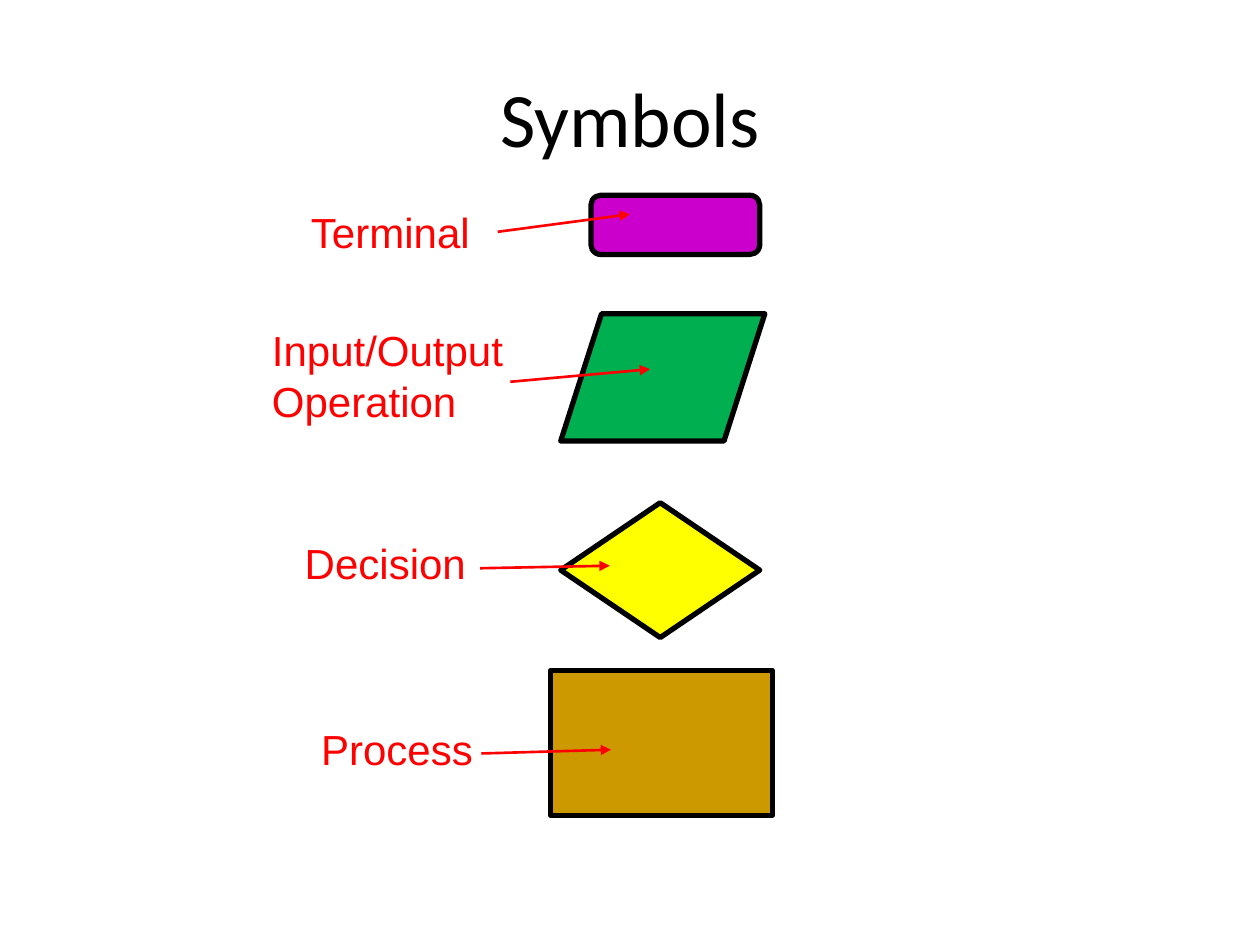
"""Build a slide that names the four basic flowchart symbols."""
from lxml import etree
from pptx import Presentation
from pptx import util as u
from pptx.dml.color import RGBColor
from pptx.enum import shapes, text
from pptx.oxml import ns

BLACK = RGBColor(0x00, 0x00, 0x00)
RED = RGBColor(0xFF, 0x00, 0x00)
PURPLE = RGBColor(0xCC, 0x00, 0xCC)
GREEN = RGBColor(0x00, 0xB0, 0x50)
YELLOW = RGBColor(0xFF, 0xFF, 0x00)
OCHRE = RGBColor(0xCC, 0x99, 0x00)
KIND = shapes.MSO_SHAPE

SYMBOLS = [
    (KIND.ROUNDED_RECTANGLE, PURPLE, (4.69, 1.55, 1.34, 0.47), 0,
     "Terminal", (2.37, 1.59, 2.13, 0.5), (3.95, 1.84, 5, 1.7)),
    (KIND.FLOWCHART_DATA, GREEN, (4.45, 2.49, 1.62, 1.01), 180,
     "Input/Output Operation", (2.06, 2.53, 2.65, 0.91), (4.05, 3.03, 5.16, 2.93)),
    (KIND.FLOWCHART_DECISION, YELLOW, (4.45, 3.99, 1.58, 1.07), 0,
     "Decision", (2.32, 4.22, 1.79, 0.5), (3.81, 4.51, 4.84, 4.49)),
    (KIND.RECTANGLE, OCHRE, (4.37, 5.32, 1.76, 1.15), 0,
     "Process", (2.45, 5.69, 1.42, 0.5), (3.82, 5.98, 4.85, 5.95)),
]


def inches(values):
    return [u.Inches(value) for value in values]


class SymbolSlide:
    def __init__(self, presentation):
        self.slide = presentation.slides.add_slide(presentation.slide_layouts[5])
        self.outline_width = u.Pt(3)
        self.arrow_width = u.Pt(1.5)

    def set_text(self, text_frame, wording, font_name, size, color):
        text_frame.word_wrap = True
        text_frame.text = wording
        font = text_frame.paragraphs[0].runs[0].font
        font.name = font_name
        font.size = u.Pt(size)
        font.color.rgb = color

    def title(self, wording, box):
        shape = self.slide.shapes.title
        shape.left, shape.top, shape.width, shape.height = inches(box)
        self.set_text(shape.text_frame, wording, "Calibri", 44, BLACK)
        shape.text_frame.vertical_anchor = text.MSO_ANCHOR.MIDDLE
        shape.text_frame.paragraphs[0].alignment = text.PP_ALIGN.CENTER

    def symbol(self, kind, fill, box, rotation):
        shape = self.slide.shapes.add_shape(kind, *inches(box))
        shape.rotation = rotation
        shape.shadow.inherit = False
        shape.fill.solid()
        shape.fill.fore_color.rgb = fill
        shape.line.color.rgb = BLACK
        shape.line.width = self.outline_width

    def label(self, wording, box):
        shape = self.slide.shapes.add_textbox(*inches(box))
        self.set_text(shape.text_frame, wording, "Arial", 24, RED)
        shape.text_frame.auto_size = text.MSO_AUTO_SIZE.SHAPE_TO_FIT_TEXT

    def arrow(self, ends):
        connector = self.slide.shapes.add_connector(
            shapes.MSO_CONNECTOR.STRAIGHT, *inches(ends))
        connector.line.color.rgb = RED
        connector.line.width = self.arrow_width
        properties = connector._element.spPr
        line = properties.find(ns.qn("a:ln"))
        etree.SubElement(line, ns.qn("a:tailEnd"), type="triangle")
        etree.SubElement(properties, ns.qn("a:effectLst"))


def main():
    presentation = Presentation()
    presentation.slide_width = u.Inches(10)
    presentation.slide_height = u.Inches(7.5)
    page = SymbolSlide(presentation)
    page.title("Symbols", (0.5, 0.3, 9, 1.25))
    for kind, fill, box, rotation, wording, label_box, arrow_ends in SYMBOLS:
        page.symbol(kind, fill, box, rotation)
        page.label(wording, label_box)
        page.arrow(arrow_ends)
    presentation.save("out.pptx")


if __name__ == "__main__":
    main()
